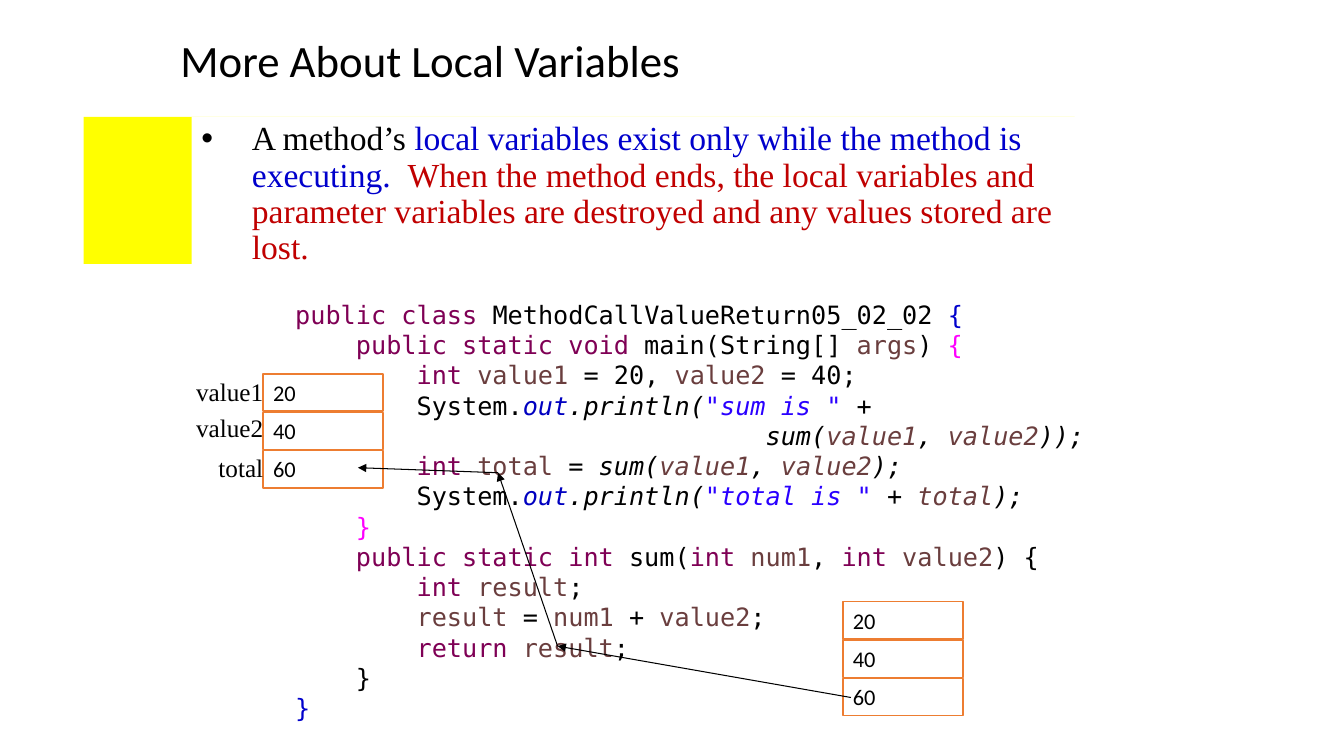
import pptx
import pptx.util
import pptx.dml.color
import pptx.enum.text
import pptx.enum.shapes
import pptx.oxml.ns
import lxml.etree

Inches = pptx.util.Inches
Pt = pptx.util.Pt
RGBColor = pptx.dml.color.RGBColor
Anchor = pptx.enum.text.MSO_ANCHOR
Align = pptx.enum.text.PP_ALIGN
Fit = pptx.enum.text.MSO_AUTO_SIZE
Kind = pptx.enum.shapes.MSO_SHAPE
qn = pptx.oxml.ns.qn

BLACK = RGBColor(0x00, 0x00, 0x00)
WHITE = RGBColor(0xFF, 0xFF, 0xFF)
YELLOW = RGBColor(0xFF, 0xFF, 0x00)
ORANGE = RGBColor(0xED, 0x7D, 0x31)
BLUE = RGBColor(0x00, 0x00, 0xCC)
RED = RGBColor(0xC0, 0x00, 0x00)
PLUM = RGBColor(0x7F, 0x00, 0x55)
BROWN = RGBColor(0x6A, 0x3E, 0x3E)
PINK = RGBColor(0xFF, 0x00, 0xFF)
NAVY = RGBColor(0x00, 0x00, 0xC0)
VIOLET = RGBColor(0x2A, 0x00, 0xFF)

TITLE = {"name": "Calibri", "size": Pt(32)}
BODY = {"name": "Times New Roman", "size": Pt(24)}
LABEL = {"name": "Times New Roman", "size": Pt(18)}
CELL = {"name": "Calibri", "size": Pt(16)}
CODE = {"name": "DejaVu Sans Mono", "size": Pt(18)}

CODE_LEFT = 0.43
CHAR = 0.1505  # width of one code character in inches

# Token marks: (colour, italic)
TOKENS = {
    "key": (PLUM, False), "var": (BROWN, False), "txt": (BLACK, False),
    "ivar": (BROWN, True), "itxt": (BLACK, True), "out": (NAVY, True),
    "str": (VIOLET, True), "blue": (BLUE, False), "pink": (PINK, False),
}

# Each line: indent in characters, then its tokens
LINES = [
    (0, [("key", "public class"), ("txt", " MethodCallValueReturn05_02_02 "),
         ("blue", "{")]),
    (4, [("key", "public static void"), ("txt", " main(String[] "),
         ("var", "args"), ("txt", ")"), ("pink", " {")]),
    (8, [("key", "int "), ("var", "value1"), ("txt", " = 20, "),
         ("var", "value2"), ("txt", " = 40;")]),
    (8, [("txt", "System."), ("out", "out"), ("itxt", ".println("),
         ("str", "\"sum is \""), ("itxt", " +")]),
    (31, [("itxt", "sum("), ("ivar", "value1"), ("itxt", ", "),
          ("ivar", "value2"), ("itxt", "));")]),
    (8, [("key", "int "), ("var", "total"), ("txt", " = "), ("itxt", "sum("),
         ("ivar", "value1"), ("itxt", ", "), ("ivar", "value2"), ("itxt", ");")]),
    (8, [("txt", "System."), ("out", "out"), ("itxt", ".println("),
         ("str", "\"total is \""), ("itxt", " + "), ("ivar", "total"),
         ("itxt", ");")]),
    (4, [("pink", "}")]),
    (4, [("key", "public static int"), ("txt", " sum("), ("key", "int "),
         ("var", "num1"), ("txt", ", "), ("key", "int "), ("var", "value2"),
         ("txt", ") {")]),
    (8, [("key", "int "), ("var", "result"), ("txt", ";")]),
    (8, [("var", "result"), ("txt", " = "), ("var", "num1"), ("txt", " + "),
         ("var", "value2"), ("txt", ";")]),
    (8, [("key", "return "), ("var", "result"), ("txt", ";")]),
    (4, [("txt", "}")]),
    (0, [("blue", "}")]),
]


class Deck:
    def __init__(self):
        self.show = pptx.Presentation()
        self.show.slide_width = Inches(13.33)
        self.show.slide_height = Inches(7.5)
        self.slide = self.show.slides.add_slide(self.show.slide_layouts[6])

    def frame(self, shape, **values):
        """Set up the text frame of a shape and return it."""
        frame = shape.text_frame
        for name, value in {"word_wrap": True, **values}.items():
            setattr(frame, name, value)
        return frame

    def fill(self, para, style, runs, **values):
        """Write (text, colour, italic) runs into a paragraph."""
        for name, value in values.items():
            setattr(para, name, value)
        for text, color, italic in runs:
            run = para.add_run()
            run.text = text
            for name, value in {**style, "italic": italic}.items():
                setattr(run.font, name, value)
            run.font.color.rgb = color

    def indent(self, para, left, first=0):
        props = para._p.get_or_add_pPr()
        props.set("marL", str(Inches(left)))
        props.set("indent", str(Inches(first)))
        return props

    def text(self, at, **values):
        box = self.slide.shapes.add_textbox(*map(Inches, at))
        return self.frame(box, **values)

    def rect(self, at, color, line=None):
        box = self.slide.shapes.add_shape(Kind.RECTANGLE, *map(Inches, at))
        box.shadow.inherit = False
        box.fill.solid()
        box.fill.fore_color.rgb = color
        if line is None:
            box.line.fill.background()
        else:
            box.line.color.rgb = line
            box.line.width = Pt(1)
        return box

    def bullet(self, at, runs):
        frame = self.frame(self.rect(at, WHITE), vertical_anchor=Anchor.TOP)
        para = frame.paragraphs[0]
        self.fill(para, BODY, runs, alignment=Align.LEFT,
                  line_spacing=0.9, space_before=Pt(12))
        props = self.indent(para, 0.5, -0.5)
        lxml.etree.SubElement(props, qn("a:buFont")).set("typeface", "Arial")
        lxml.etree.SubElement(props, qn("a:buChar")).set("char", "•")

    def stack(self, left, top, values):
        """Draw memory cells one below the other."""
        for row, value in enumerate(values):
            box = self.rect((left, top + row * 0.38, 1.19, 0.37), WHITE, ORANGE)
            frame = self.frame(box, vertical_anchor=Anchor.TOP,
                               auto_size=Fit.SHAPE_TO_FIT_TEXT)
            self.fill(frame.paragraphs[0], CELL, [(value, BLACK, False)],
                      alignment=Align.LEFT)

    def code(self, at, lines):
        frame = self.text(at, auto_size=Fit.SHAPE_TO_FIT_TEXT)
        for row, (depth, parts) in enumerate(lines):
            para = frame.add_paragraph() if row else frame.paragraphs[0]
            self.indent(para, CODE_LEFT + depth * CHAR)
            self.fill(para, CODE, [(text, *TOKENS[mark]) for mark, text in parts])

    def label(self, top, text):
        frame = self.text((1.61, top, 1.1, 0.4), auto_size=Fit.SHAPE_TO_FIT_TEXT)
        self.fill(frame.paragraphs[0], LABEL, [(text, BLACK, False)],
                  alignment=Align.RIGHT)

    def arrow(self, start, end):
        line = self.slide.shapes.add_connector(
            pptx.enum.shapes.MSO_CONNECTOR.STRAIGHT, *map(Inches, start + end))
        line.line.color.rgb = BLACK
        line.line.width = Pt(0.75)
        props = line._element.spPr
        tip = lxml.etree.SubElement(props.find(qn("a:ln")), qn("a:tailEnd"))
        tip.set("type", "triangle")
        lxml.etree.SubElement(props, qn("a:effectLst"))


def main():
    deck = Deck()
    title = deck.text((1.69, 0.22, 5.39, 0.81), vertical_anchor=Anchor.MIDDLE)
    deck.fill(title.paragraphs[0], TITLE,
              [("More About Local Variables", BLACK, False)], line_spacing=0.9)

    deck.rect((0.83, 1.16, 9.83, 1.46), YELLOW)
    deck.bullet((1.9, 1.16, 9.27, 6.18), [
        ("A method’s ", BLACK, False),
        ("local variables exist only while the method is executing.  ",
         BLUE, False),
        ("When the method ends, the local variables and parameter variables "
         "are destroyed and any values stored are lost.", RED, False),
    ])

    for left, top in ((8.36, 5.97), (2.61, 3.71)):
        deck.stack(left, top, ("20", "40", "60"))
    deck.code((2.4, 2.92, 8.9, 4.34), LINES)
    for top, name in ((3.68, "value1"), (4.04, "value2"), (4.44, "total")):
        deck.label(top, name)

    route = [(8.44, 6.92), (5.53, 6.41), (4.94, 4.69), (3.55, 4.64)]
    for start, end in zip(route, route[1:]):
        deck.arrow(start, end)
    deck.show.save("out.pptx")


if __name__ == "__main__":
    main()
